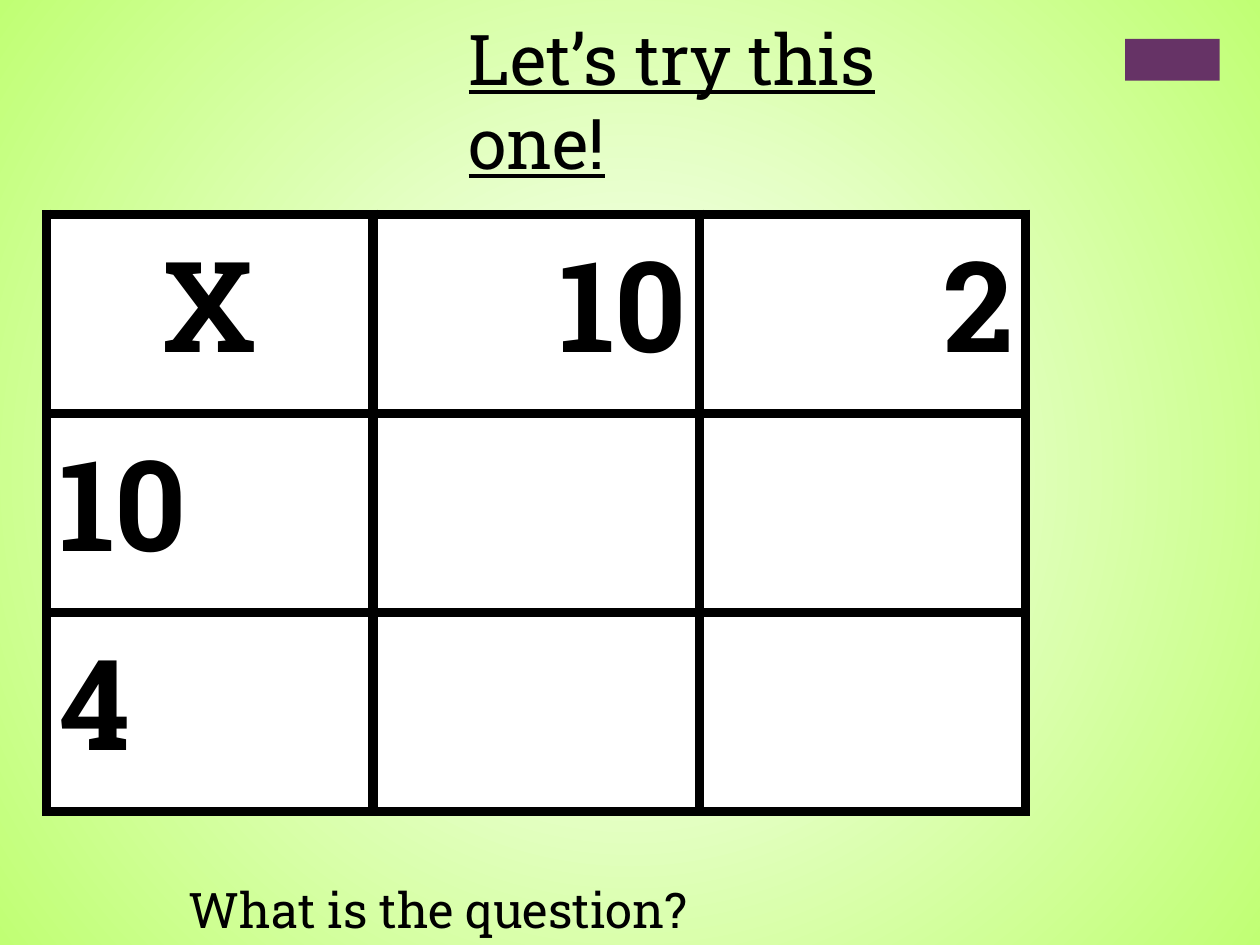
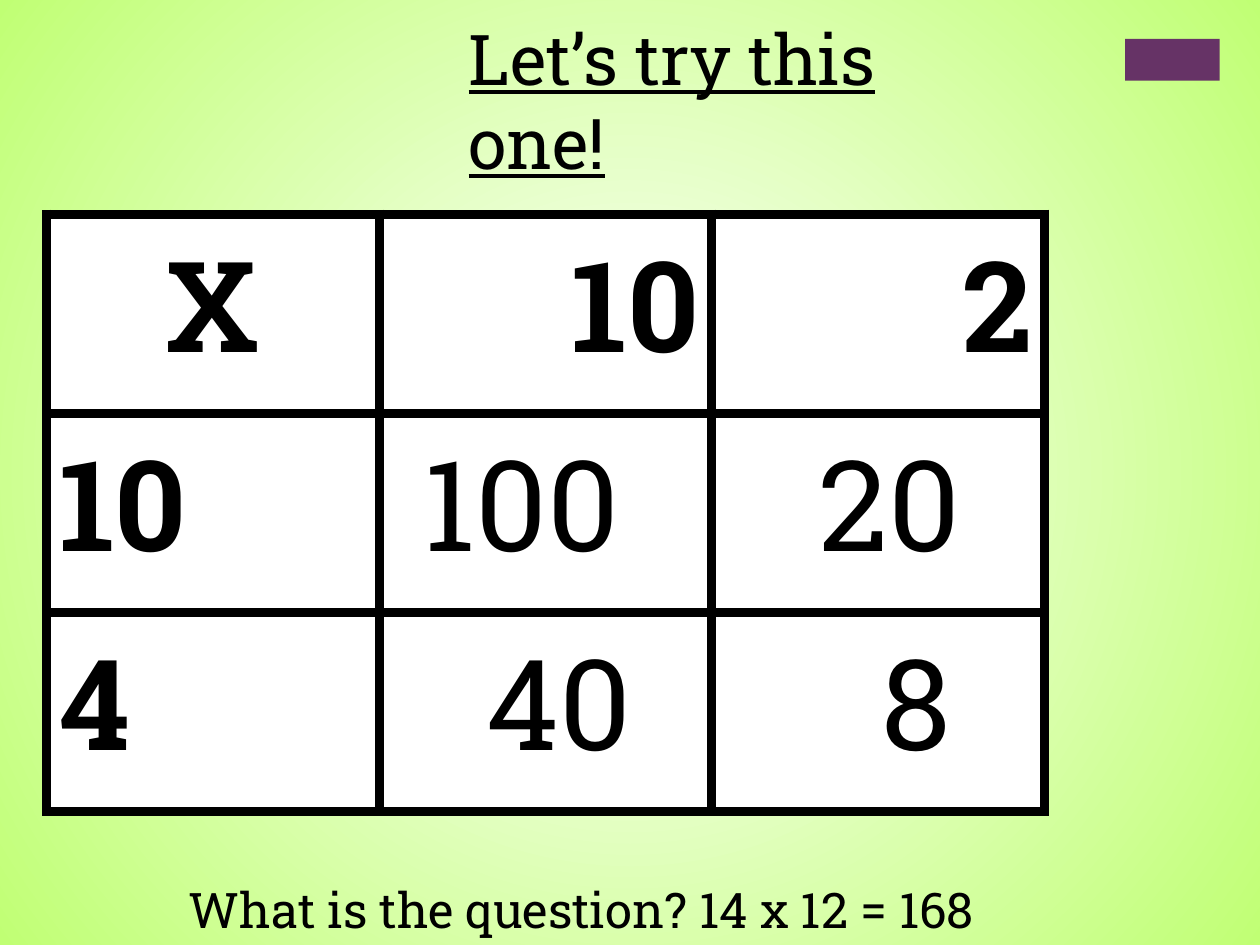
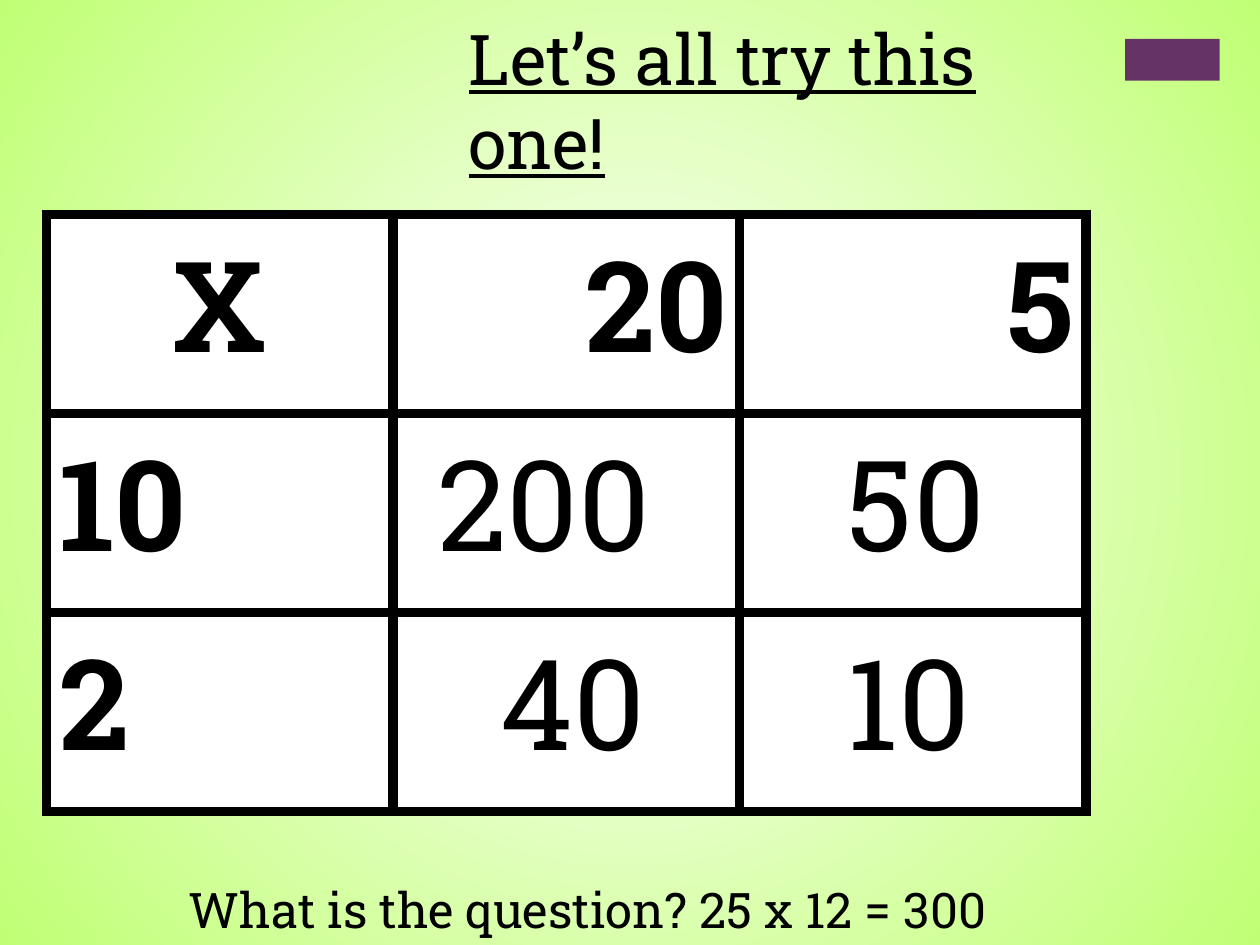
from lxml import etree
from pptx import Presentation
from pptx.dml.color import RGBColor
from pptx.enum.shapes import MSO_SHAPE
from pptx.enum.text import MSO_ANCHOR, MSO_AUTO_SIZE, PP_ALIGN
from pptx.oxml import parse_xml
from pptx.oxml.ns import nsdecls, qn
from pptx.util import Inches, Pt

RECTANGLE = MSO_SHAPE.RECTANGLE
TOP = MSO_ANCHOR.TOP
NO_AUTOFIT = MSO_AUTO_SIZE.NONE
LEFT, CENTER, RIGHT = PP_ALIGN.LEFT, PP_ALIGN.CENTER, PP_ALIGN.RIGHT

BLACK = RGBColor(0x00, 0x00, 0x00)
WHITE = RGBColor(0xFF, 0xFF, 0xFF)
LIME = RGBColor(0xC0, 0xFF, 0x74)
PURPLE = RGBColor(0x66, 0x33, 0x66)
FONT = "Roboto Slab"
BORDER = Pt(6)
INDENT_STEP = 0.25
ROW_HEIGHT = 1.58

PROBLEMS = [
    {
        "title": "Let’s try this one!", "title_width": 4.53,
        "question": "What is the question?", "question_width": 4.45,
        "column_width": 2.59,
        "across": ["10", "2"], "down": ["10", "4"],
        "products": [], "indents": [],
    },
    {
        "title": "Let’s try this one!", "title_width": 4.53,
        "question": "What is the question? 14 x 12 = 168", "question_width": 7.06,
        "column_width": 2.64,
        "across": ["10", "2"], "down": ["10", "4"],
        "products": [["100", "20"], ["40", "8"]], "indents": [[1, 3], [3, 5]],
    },
    {
        "title": "Let’s all try this one!", "title_width": 5.3,
        "question": "What is the question? 25 x 12 = 300", "question_width": 7.52,
        "column_width": 2.75,
        "across": ["20", "5"], "down": ["10", "2"],
        "products": [["200", "50"], ["40", "10"]], "indents": [[1, 3], [3, 3]],
    },
]


def style(paragraph, size, align=LEFT, bold=False, underline=False):
    paragraph.alignment = align
    font = paragraph.font
    font.name, font.size, font.bold, font.underline = FONT, Pt(size), bold, underline
    font.color.rgb = BLACK


def paint_background(master):
    fill = master.background.fill
    fill.gradient()
    for stop, color in zip(fill.gradient_stops, (WHITE, LIME)):
        stop.color.rgb = color
    gradient = master.element.cSld.find(".//" + qn("a:gradFill"))
    gradient.replace(gradient.find(qn("a:lin")), parse_xml(
        f'<a:path {nsdecls("a")} path="circle">'
        '<a:fillToRect l="50000" t="50000" r="50000" b="50000"/></a:path>'))


def add_master_tab(master, slide):
    tab = slide.shapes.add_shape(
        RECTANGLE, Inches(8.93), Inches(0.31), Inches(0.75), Inches(0.33))
    tab.shadow.inherit = False
    tab.fill.solid()
    tab.fill.fore_color.rgb = PURPLE
    tab.line.fill.background()
    tab.element.nvSpPr.cNvPr.set("id", "100")
    master.element.cSld.spTree.append(tab.element)


def format_cell(cell):
    cell.fill.solid()
    cell.fill.fore_color.rgb = WHITE
    cell.vertical_anchor = TOP
    properties = cell._tc.get_or_add_tcPr()
    for position, side in enumerate(("lnL", "lnR", "lnT", "lnB")):
        border = etree.Element(qn(f"a:{side}"), w=str(BORDER))
        color = etree.SubElement(etree.SubElement(border, qn("a:solidFill")), qn("a:srgbClr"))
        color.set("val", str(BLACK))
        properties.insert(position, border)


def write_cell(cell, text, align=LEFT, bold=True, indent=0):
    paragraph = cell.text_frame.paragraphs[0]
    paragraph.text = text
    if indent:
        paragraph._p.get_or_add_pPr().set("marL", str(Inches(indent * INDENT_STEP)))
    style(paragraph, 72, align, bold)


def add_grid(slide, problem):
    rows, columns = len(problem["down"]) + 1, len(problem["across"]) + 1
    grid = slide.shapes.add_table(
        rows, columns, Inches(0.37), Inches(1.7),
        Inches(problem["column_width"] * columns), Inches(ROW_HEIGHT * rows)).table
    grid.first_row = grid.horz_banding = False
    for cell in grid.iter_cells():
        format_cell(cell)
    write_cell(grid.cell(0, 0), "X", CENTER)
    for column, factor in enumerate(problem["across"], 1):
        write_cell(grid.cell(0, column), factor, RIGHT)
    for row, factor in enumerate(problem["down"], 1):
        write_cell(grid.cell(row, 0), factor)
    for row, (products, indents) in enumerate(zip(problem["products"], problem["indents"]), 1):
        for column, (product, indent) in enumerate(zip(products, indents), 1):
            write_cell(grid.cell(row, column), product, bold=False, indent=indent)


def add_title(slide, problem):
    title = slide.shapes.title
    title.left, title.top = Inches(3.62), Inches(0.07)
    title.width, title.height = Inches(problem["title_width"]), Inches(0.77)
    frame = title.text_frame
    frame.text = problem["title"]
    frame.word_wrap = True
    frame.auto_size = NO_AUTOFIT
    frame.vertical_anchor = TOP
    style(frame.paragraphs[0], 40, underline=True)


def add_question(slide, problem):
    question = slide.shapes.add_textbox(
        Inches(1.4), Inches(6.93), Inches(problem["question_width"]), Inches(0.57))
    frame = question.text_frame
    frame.text = problem["question"]
    frame.word_wrap = True
    style(frame.paragraphs[0], 28)


def main():
    prs = Presentation()
    prs.slide_width, prs.slide_height = Inches(10), Inches(7.5)
    paint_background(prs.slide_master)
    title_only = prs.slide_layouts[5]
    for problem in PROBLEMS:
        slide = prs.slides.add_slide(title_only)
        add_grid(slide, problem)
        add_title(slide, problem)
        add_question(slide, problem)
    add_master_tab(prs.slide_master, prs.slides[0])
    prs.save("out.pptx")


if __name__ == "__main__":
    main()
